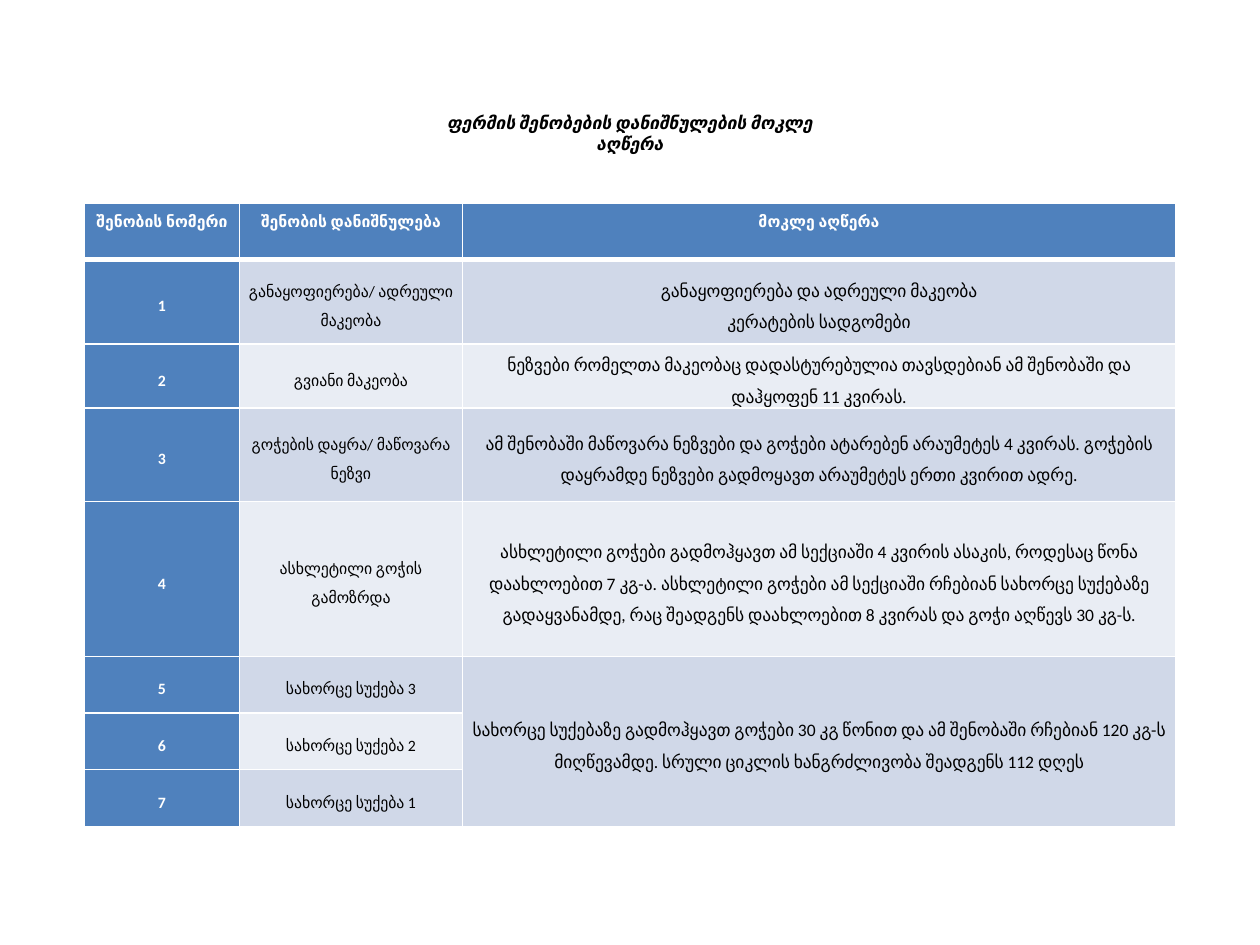
import pptx
import pptx.dml.color
import pptx.enum.text
import pptx.oxml
import pptx.oxml.ns
import pptx.util

Inches, Pt = pptx.util.Inches, pptx.util.Pt
RGBColor = pptx.dml.color.RGBColor
PP_ALIGN = pptx.enum.text.PP_ALIGN
MSO_ANCHOR = pptx.enum.text.MSO_ANCHOR

WHITE = RGBColor(0xFF, 0xFF, 0xFF)
BLACK = RGBColor(0, 0, 0)
BLUE = RGBColor(0x4F, 0x81, 0xBD)
BANDS = (RGBColor(0xD0, 0xD8, 0xE8), RGBColor(0xE9, 0xED, 0xF4))

TITLE = "ფერმის შენობების დანიშნულების მოკლე აღწერა"
COL_WIDTHS = (1.23, 1.77, 5.66)
ROW_HEIGHTS = (0.45, 0.67, 0.51, 0.74, 1.23, 0.45, 0.45, 0.45)
HEADER = ("შენობის ნომერი", "შენობის დანიშნულება", "მოკლე აღწერა")
BUILDINGS = (
    ("განაყოფიერება/ ადრეული მაკეობა",
     "განაყოფიერება და ადრეული მაკეობა\nკერატების სადგომები"),
    ("გვიანი მაკეობა",
     "ნეზვები რომელთა მაკეობაც დადასტურებულია თავსდებიან ამ შენობაში და "
     "დაჰყოფენ 11 კვირას."),
    ("გოჭების დაყრა/ მაწოვარა ნეზვი",
     "ამ შენობაში მაწოვარა ნეზვები და გოჭები ატარებენ არაუმეტეს 4 კვირას. "
     "გოჭების დაყრამდე ნეზვები გადმოყავთ არაუმეტეს ერთი კვირით ადრე."),
    ("ასხლეტილი გოჭის გამოზრდა",
     "ასხლეტილი გოჭები გადმოჰყავთ ამ სექციაში 4 კვირის ასაკის, როდესაც წონა "
     "დაახლოებით 7 კგ-ა. ასხლეტილი გოჭები ამ სექციაში რჩებიან სახორცე სუქებაზე "
     "გადაყვანამდე, რაც შეადგენს დაახლოებით 8 კვირას და გოჭი აღწევს 30 კგ-ს."),
    ("სახორცე სუქება 3",
     "სახორცე სუქებაზე გადმოჰყავთ გოჭები 30 კგ წონით და ამ შენობაში რჩებიან "
     "120 კგ-ს მიღწევამდე. სრული ციკლის ხანგრძლივობა შეადგენს 112 დღეს"),
    ("სახორცე სუქება 2", ""),
    ("სახორცე სუქება 1", ""),
)


def add_run(p, text, size, font, color, bold, italic=False):
    r = p.add_run()
    r.text = text
    r.font.size = Pt(size)
    r.font.name = font
    r.font.color.rgb = color
    r.font.bold = bold
    r.font.italic = italic


def set_borders(cell, top=1, bottom=1):
    """Give the cell white borders; widths are in points."""
    tc_pr = cell._tc.get_or_add_tcPr()
    widths = {"lnL": 1, "lnR": 1, "lnT": top, "lnB": bottom}
    for i, (tag, width) in enumerate(widths.items()):
        tc_pr.insert(i, pptx.oxml.parse_xml(
            f'<a:{tag} {pptx.oxml.ns.nsdecls("a")} w="{Pt(width)}">'
            f'<a:solidFill><a:srgbClr val="{WHITE}"/></a:solidFill></a:{tag}>'))


def fill_cell(cell, text, size, color, fill, bold):
    cell.fill.solid()
    cell.fill.fore_color.rgb = fill
    cell.margin_left = cell.margin_right = Inches(0.06)
    cell.margin_top = cell.margin_bottom = 0
    p = cell.text_frame.paragraphs[0]
    p.alignment = PP_ALIGN.CENTER
    p.line_spacing = 1.5
    for i, line in enumerate(text.split("\n")):
        if i:
            p.add_line_break()
        if line:
            add_run(p, line, size, "Calibri", color, bold)


def add_title(slide, left, top, width, height):
    tf = slide.shapes.add_textbox(left, top, width, height).text_frame
    tf.word_wrap = True
    tf.margin_top = tf.margin_bottom = 0
    p = tf.paragraphs[0]
    p.alignment = PP_ALIGN.CENTER
    add_run(p, TITLE, 10, "Lato", BLACK, True, italic=True)


def add_buildings_table(slide, left, top, width, height):
    table = slide.shapes.add_table(
        len(ROW_HEIGHTS), len(COL_WIDTHS), left, top, width, height).table
    for column, share in zip(table.columns, COL_WIDTHS):
        column.width = int(width * share / sum(COL_WIDTHS))
    for row, share in zip(table.rows, ROW_HEIGHTS):
        row.height = int(height * share / sum(ROW_HEIGHTS))

    for col, text in enumerate(HEADER):
        cell = table.cell(0, col)
        fill_cell(cell, text, 9, WHITE, BLUE, True)
        set_borders(cell, bottom=3)

    for row, (purpose, description) in enumerate(BUILDINGS, start=1):
        band = BANDS[(row - 1) % 2]
        fill_cell(table.cell(row, 0), str(row), 9, WHITE, BLUE, True)
        fill_cell(table.cell(row, 1), purpose, 9, BLACK, band, False)
        fill_cell(table.cell(row, 2), description, 10, BLACK, band, False)
        for cell in table.rows[row].cells:
            cell.vertical_anchor = MSO_ANCHOR.MIDDLE
            set_borders(cell, top=3 if row == 1 else 1)

    # The three fattening buildings share one description.
    table.cell(5, 2).merge(table.cell(7, 2))


def main():
    prs = pptx.Presentation()
    prs.slide_width, prs.slide_height = Inches(10), Inches(7.5)
    slide = prs.slides.add_slide(prs.slide_layouts[6])
    add_buildings_table(slide, Inches(0.67), Inches(1.61), Inches(8.66), Inches(4.95))
    add_title(slide, Inches(3.35), Inches(0.89), Inches(3.3), Inches(0.6))
    prs.save("out.pptx")


if __name__ == "__main__":
    main()
